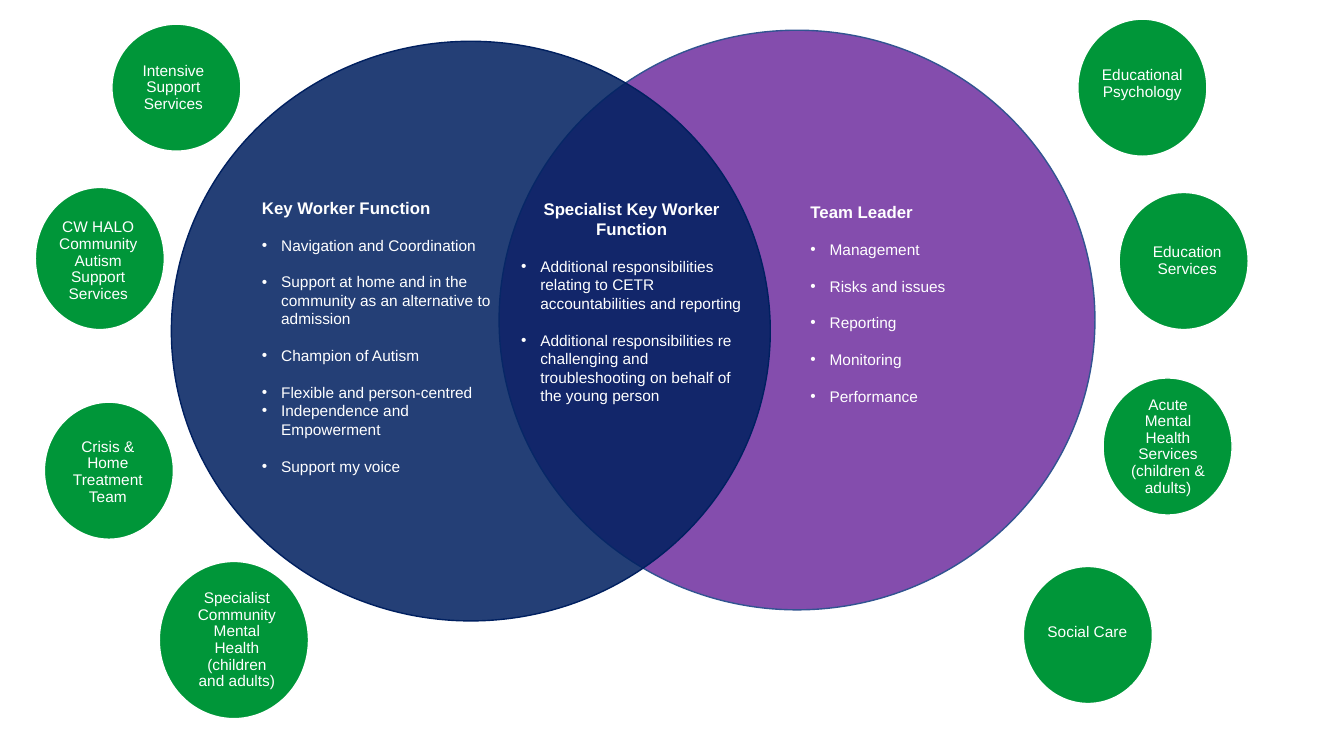
from dataclasses import dataclass

from lxml import etree
from pptx import Presentation
from pptx.dml.color import RGBColor
from pptx.enum.shapes import MSO_SHAPE
from pptx.enum.text import MSO_ANCHOR, PP_ALIGN
from pptx.oxml.ns import qn
from pptx.shapes.autoshape import Shape
from pptx.slide import Slide
from pptx.text.text import Font
from pptx.util import Inches, Pt

OVAL = MSO_SHAPE.OVAL
MIDDLE = MSO_ANCHOR.MIDDLE
CENTER, LEFT = PP_ALIGN.CENTER, PP_ALIGN.LEFT


@dataclass(frozen=True)
class Theme:
    font: str = "Arial"
    text: str = "FFFFFF"
    service: str = "009639"
    service_edge: str = "FFFFFF"
    leader: str = "7030A0"
    leader_edge: str = "325491"
    worker: str = "002060"
    heading_pt: float = 12
    body_pt: float = 11
    item_gap_pt: float = 13
    edge_pt: float = 1
    role_opacity: int = 86


@dataclass(frozen=True)
class Box:
    left: float
    top: float
    width: float
    height: float

    def lengths(self) -> tuple[int, int, int, int]:
        return (Inches(self.left), Inches(self.top),
                Inches(self.width), Inches(self.height))


@dataclass(frozen=True)
class Service:
    name: str
    circle: Box
    label: Box


@dataclass(frozen=True)
class Duty:
    text: str
    spaced: bool = True


@dataclass(frozen=True)
class Role:
    title: str
    box: Box
    duties: tuple[Duty, ...]
    title_align: PP_ALIGN = LEFT


THEME = Theme()

SERVICES = (
    Service("Social Care", Box(10.15, 5.62, 1.28, 1.36), Box(10.36, 5.91, 0.85, 0.72)),
    Service("Specialist Community Mental Health (children and adults)",
            Box(1.58, 5.57, 1.48, 1.56), Box(1.9, 6.12, 0.9, 0.46)),
    Service("Acute Mental Health Services (children & adults)",
            Box(10.94, 3.75, 1.28, 1.36), Box(11.18, 4.07, 0.81, 0.72)),
    Service("Education Services", Box(11.1, 1.91, 1.28, 1.36), Box(11.4, 2.36, 0.75, 0.46)),
    Service("Educational Psychology",
            Box(10.69, 0.19, 1.28, 1.36), Box(10.91, 0.49, 0.84, 0.68)),
    Service("Crisis & Home Treatment Team",
            Box(0.44, 3.99, 1.28, 1.36), Box(0.66, 4.37, 0.82, 0.63)),
    Service("Intensive Support Services",
            Box(1.11, 0.24, 1.28, 1.26), Box(1.28, 0.53, 0.88, 0.68)),
    Service("CW HALO Community Autism Support Services",
            Box(0.35, 1.86, 1.28, 1.41), Box(0.54, 2.21, 0.87, 0.76)),
)

LEADER_CIRCLE = Box(4.95, 0.3, 5.91, 5.75)
WORKER_CIRCLE = Box(1.7, 0.41, 5.94, 5.75)

ROLES = (
    Role("Team Leader", Box(7.94, 1.95, 2.44, 2.15), (
        Duty("Management"),
        Duty("Risks and issues"),
        Duty("Reporting"),
        Duty("Monitoring"),
        Duty("Performance"),
    )),
    Role("Key Worker Function", Box(2.5, 1.91, 2.56, 4.11), (
        Duty("Navigation and Coordination"),
        Duty("Support at home and in the community as an alternative to admission"),
        Duty("Champion of Autism"),
        Duty("Flexible and person-centred"),
        Duty("Independence and Empowerment", spaced=False),
        Duty("Support my voice"),
    )),
    Role("Specialist Key Worker Function", Box(5.07, 1.92, 2.39, 2.98), (
        Duty("Additional responsibilities relating to CETR accountabilities and reporting"),
        Duty("Additional responsibilities re challenging and troubleshooting "
             "on behalf of the young person"),
    ), CENTER),
)


def style_font(font: Font, size: float, bold: bool = False) -> None:
    font.name = THEME.font
    font.size = Pt(size)
    font.bold = bold
    font.color.rgb = RGBColor.from_string(THEME.text)


def add_circle(slide: Slide, box: Box, fill: str, edge: str, opacity: int = 100) -> None:
    circle = slide.shapes.add_shape(OVAL, *box.lengths())
    circle.shadow.inherit = False
    circle.fill.solid()
    circle.fill.fore_color.rgb = RGBColor.from_string(fill)
    circle.line.color.rgb = RGBColor.from_string(edge)
    circle.line.width = Pt(THEME.edge_pt)
    if opacity < 100:
        color = circle.fill._xPr.find(qn("a:solidFill")).find(qn("a:srgbClr"))
        etree.SubElement(color, qn("a:alpha"), val=str(opacity * 1000))


def add_text_area(slide: Slide, box: Box, text: str) -> Shape:
    area = slide.shapes.add_textbox(*box.lengths())
    area.text_frame.word_wrap = True
    area.text_frame.text = text
    return area


def add_service(slide: Slide, service: Service) -> None:
    add_circle(slide, service.circle, THEME.service, THEME.service_edge)
    frame = add_text_area(slide, service.label, service.name).text_frame
    frame.vertical_anchor = MIDDLE
    frame.margin_left = frame.margin_right = Inches(0.01)
    frame.margin_top = frame.margin_bottom = Inches(0.01)
    label = frame.paragraphs[0]
    label.alignment = CENTER
    label.line_spacing = 0.9
    style_font(label.runs[0].font, THEME.body_pt)


def add_role(slide: Slide, role: Role) -> None:
    frame = add_text_area(slide, role.box, role.title).text_frame
    title = frame.paragraphs[0]
    title.alignment = role.title_align
    style_font(title.runs[0].font, THEME.heading_pt, bold=True)
    for duty in role.duties:
        item = frame.add_paragraph()
        item.text = duty.text
        item.space_before = Pt(THEME.item_gap_pt if duty.spaced else 0)
        properties = item._p.get_or_add_pPr()
        properties.set("marL", str(Inches(0.19)))
        properties.set("indent", str(-Inches(0.19)))
        etree.SubElement(properties, qn("a:buFont"), typeface=THEME.font)
        etree.SubElement(properties, qn("a:buChar"), char="•")
        style_font(item.runs[0].font, THEME.body_pt)


def main() -> None:
    deck = Presentation()
    deck.slide_width, deck.slide_height = Inches(13.33), Inches(7.5)
    slide = deck.slides.add_slide(deck.slide_layouts[6])
    for service in SERVICES:
        add_service(slide, service)
    add_circle(slide, LEADER_CIRCLE, THEME.leader, THEME.leader_edge, THEME.role_opacity)
    add_circle(slide, WORKER_CIRCLE, THEME.worker, THEME.worker, THEME.role_opacity)
    for role in ROLES:
        add_role(slide, role)
    deck.save("out.pptx")


if __name__ == "__main__":
    main()
